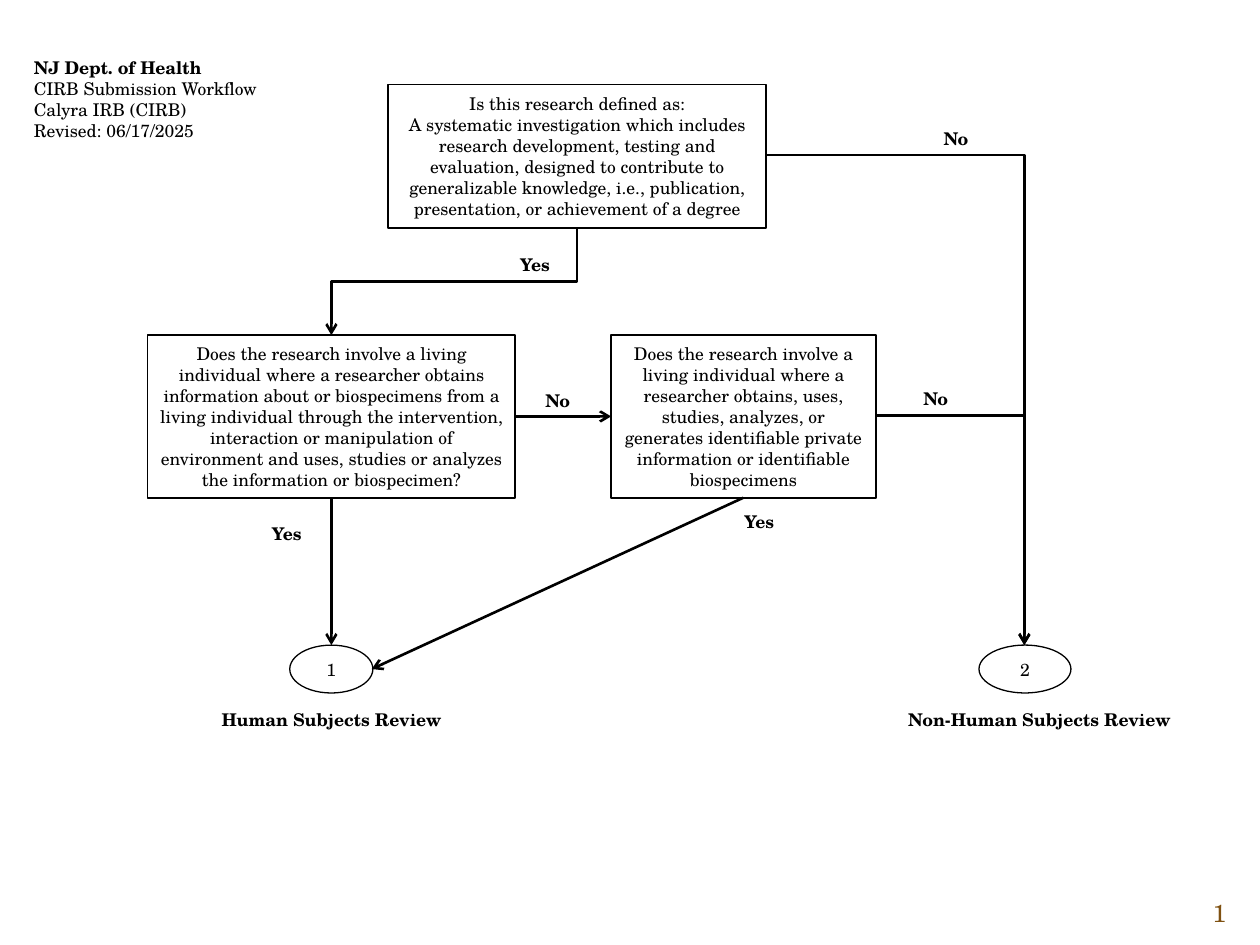
from dataclasses import dataclass

from lxml.etree import SubElement
from pptx import Presentation
from pptx.dml.color import RGBColor
from pptx.enum.shapes import MSO_CONNECTOR as Link, MSO_SHAPE as Shape
from pptx.enum.text import MSO_ANCHOR as Anchor, PP_ALIGN as Align
from pptx.oxml.ns import qn
from pptx.util import Inches, Pt

TOP, LEFT, BOTTOM, RIGHT = range(4)


@dataclass(frozen=True)
class Theme:
    font: str = "TeX Gyre Schola"
    ink: RGBColor = RGBColor(0, 0, 0)
    accent: RGBColor = RGBColor(0x7F, 0x51, 0x11)
    body: float = 10
    number: float = 14
    outline: float = 1
    thin: float = 0.75
    flow: float = 1.5


class Flowchart:
    def __init__(self, page, theme):
        self.page = page
        self.theme = theme

    def fill_text(self, frame, lines, align=Align.LEFT, bold_first=False, size=None, color=None):
        frame.word_wrap = True
        for index, line in enumerate(lines):
            para = frame.paragraphs[0] if index == 0 else frame.add_paragraph()
            para.alignment = align
            span = para.add_run()
            span.text = line
            span.font.name = self.theme.font
            span.font.size = Pt(size or self.theme.body)
            span.font.bold = bold_first and index == 0
            span.font.color.rgb = color or self.theme.ink

    def text(self, left, top, width, height, lines, **style):
        box = self.page.shapes.add_textbox(*map(Inches, (left, top, width, height)))
        self.fill_text(box.text_frame, lines, **style)

    def label(self, left, top, width, words):
        self.text(left, top, width, 0.27, [words], bold_first=True)

    def node(self, kind, left, top, width, height, lines, weight):
        box = self.page.shapes.add_shape(kind, *map(Inches, (left, top, width, height)))
        box.shadow.inherit = False
        box.fill.background()
        box.line.color.rgb = self.theme.ink
        box.line.width = Pt(weight)
        frame = box.text_frame
        frame.vertical_anchor = Anchor.MIDDLE
        frame.margin_left = frame.margin_right = Inches(0.08)
        self.fill_text(frame, lines, Align.CENTER)
        return box

    def question(self, left, top, width, height, *lines):
        return self.node(Shape.FLOWCHART_PROCESS, left, top, width, height, lines, self.theme.outline)

    def outcome(self, left, width, number):
        return self.node(Shape.FLOWCHART_CONNECTOR, left, 5.12, width, 0.38, [number], self.theme.thin)

    def connector(self, kind, start, end):
        link = self.page.shapes.add_connector(kind, *map(Inches, start + end))
        link.line.color.rgb = self.theme.ink
        link.line.width = Pt(self.theme.flow)
        properties = link.element.spPr
        SubElement(properties.find(qn("a:ln")), qn("a:tailEnd"), type="arrow")
        SubElement(properties, qn("a:effectLst"))
        return link

    def arrow(self, source, side, target=None, target_side=TOP, end=(0, 0)):
        link = self.connector(Link.STRAIGHT, (0, 0), end)
        link.begin_connect(source, side)
        if target is not None:
            link.end_connect(target, target_side)

    def corner_arrow(self, start, end):
        link = self.connector(Link.ELBOW, start, end)
        link.element.spPr.find(qn("a:prstGeom")).set("prst", "bentConnector2")

    def step_down_arrow(self, start, end):
        middle_x, middle_y = (start[0] + end[0]) / 2, (start[1] + end[1]) / 2
        half_run, half_drop = abs(end[0] - start[0]) / 2, abs(end[1] - start[1]) / 2
        link = self.connector(
            Link.ELBOW,
            (middle_x - half_drop, middle_y - half_run),
            (middle_x + half_drop, middle_y + half_run),
        )
        link.element.spPr.find(qn("a:xfrm")).set("rot", "5400000")


def main():
    deck = Presentation()
    deck.slide_width, deck.slide_height = Inches(10), Inches(7.5)
    theme = Theme()
    chart = Flowchart(deck.slides.add_slide(deck.slide_layouts[6]), theme)

    chart.text(0.17, 0.4, 2.42, 0.77, [
        "NJ Dept. of Health",
        "CIRB Submission Workflow",
        "Calyra IRB (CIRB)",
        "Revised: 06/17/2025",
    ], bold_first=True)

    chart.question(
        3.08, 0.67, 3, 1.14,
        "Is this research defined as:",
        "A systematic investigation which includes research development, testing and "
        "evaluation, designed to contribute to generalizable knowledge, i.e., publication, "
        "presentation, or achievement of a degree",
    )
    intervention = chart.question(
        1.17, 2.66, 2.92, 1.29,
        "Does the research involve a living individual where a researcher obtains "
        "information about or biospecimens from a living individual through the "
        "intervention, interaction or manipulation of environment and uses, studies or "
        "analyzes the information or biospecimen?",
    )
    private_data = chart.question(
        4.85, 2.66, 2.1, 1.29,
        "Does the research involve a living individual where a researcher obtains, uses, "
        "studies, analyzes, or generates identifiable private information or identifiable "
        "biospecimens",
    )
    human = chart.outcome(2.3, 0.66, "1")
    chart.outcome(7.77, 0.73, "2")

    chart.step_down_arrow((4.58, 1.81), (2.63, 2.66))
    chart.arrow(intervention, RIGHT, private_data, LEFT)
    chart.arrow(intervention, BOTTOM, human, TOP)
    chart.arrow(private_data, BOTTOM, end=(2.95, 5.31))
    for start in ((6.08, 1.23), (6.95, 3.3)):
        chart.corner_arrow(start, (8.13, 5.12))

    for left, top in ((4.03, 1.97), (5.81, 4.01), (2.06, 4.1)):
        chart.label(left, top, 0.47, "Yes")
    for left, top in ((7.39, 0.97), (4.23, 3.05), (7.23, 3.03)):
        chart.label(left, top, 0.54, "No")
    chart.label(1.66, 5.58, 2.09, "Human Subjects Review")
    chart.label(7.11, 5.58, 2.33, "Non-Human Subjects Review")

    chart.text(9.33, 7.08, 0.5, 0.33, ["1"], align=Align.RIGHT, size=theme.number, color=theme.accent)
    deck.save("out.pptx")


if __name__ == "__main__":
    main()
